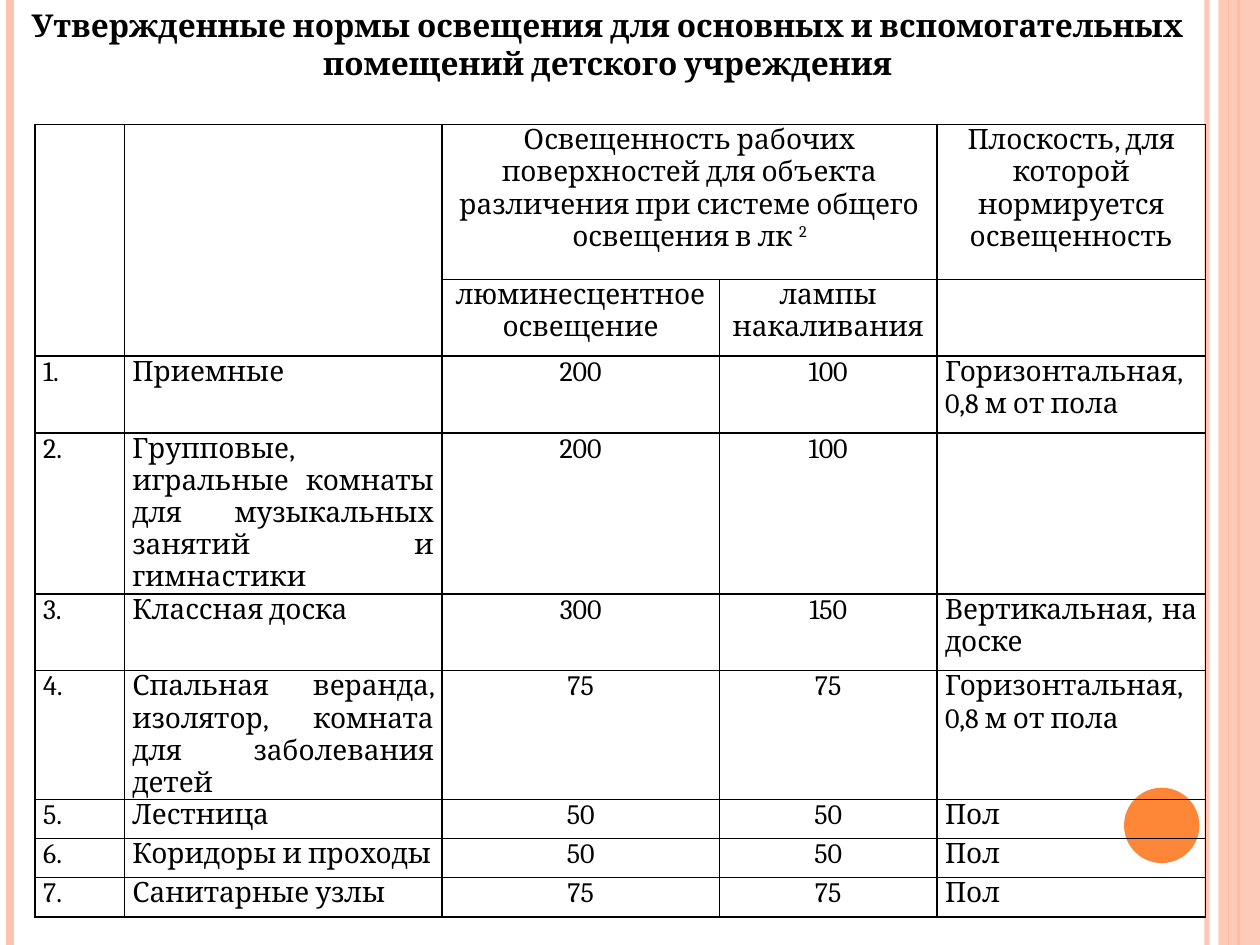
from typing import NamedTuple

from lxml.etree import SubElement
from pptx import Presentation
from pptx.dml.color import RGBColor
from pptx.enum.shapes import MSO_CONNECTOR, MSO_SHAPE
from pptx.enum.text import MSO_ANCHOR, MSO_AUTO_SIZE, PP_ALIGN
from pptx.oxml.ns import qn
from pptx.util import Cm, Pt

BLACK = RGBColor(0, 0, 0)
PEACH = RGBColor(0xFE, 0xC3, 0xAE)
ORANGE = RGBColor(0xFE, 0x86, 0x37)
FONT = "Cambria"
WIDE, HIGH = 25.4, 19.05

BODY = {"name": FONT, "size": Pt(16), "bold": False}
HEAD = {"name": FONT, "size": Pt(18), "bold": True}


class Stripe(NamedTuple):
    x: float
    color: RGBColor
    width: float
    alpha: int = 100


class Block(NamedTuple):
    kind: MSO_SHAPE
    box: tuple
    color: RGBColor
    alpha: int = 100


STRIPES = [
    Stripe(24.33, PEACH, 3, 93),
    Stripe(0.2, PEACH, 4.5),
    Stripe(24.97, ORANGE, 1.5),
    Stripe(24.77, ORANGE, 0.75),
]
BLOCKS = [
    Block(MSO_SHAPE.RECTANGLE, (24.56, 0, 0.84, HIGH), PEACH, 87),
    Block(MSO_SHAPE.OVAL, (22.66, 15.88, 1.52, 1.52), ORANGE),
]

TITLE = ("Утвержденные нормы освещения для основных и вспомогательных "
         "помещений детского учреждения")
COLS = [1.8, 6.4, 5.59, 4.39, 5.41]
ROWS = [3.12, 1.55, 1.55, 2.34, 1.55, 2.34, 0.79, 0.79, 0.79]
FLAT = "Горизонтальная, 0,8 м от пола"
TOP = [
    ["", "", "Освещенность рабочих поверхностей для объекта различения "
     "при системе общего освещения в лк ", "",
     "Плоскость, для которой нормируется освещенность"],
    ["", "", "люминесцентное освещение", "лампы накаливания", ""],
]
ROOMS = [
    ("Приемные", 200, 100, FLAT),
    ("Групповые, игральные комнаты для музыкальных занятий и гимнастики",
     200, 100, ""),
    ("Классная доска", 300, 150, "Вертикальная, на доске"),
    ("Спальная веранда, изолятор, комната для заболевания детей",
     75, 75, FLAT),
    ("Лестница", 50, 50, "Пол"),
    ("Коридоры и проходы", 50, 50, "Пол"),
    ("Санитарные узлы", 75, 75, "Пол"),
]


def style(item, values: dict) -> None:
    for key, value in values.items():
        setattr(item, key, value)


def fade(item, alpha: int) -> None:
    """Set the opacity, in percent, of the only colour in a shape."""
    if alpha < 100:
        color = next(item._element.spPr.iter(qn("a:srgbClr")))
        SubElement(color, qn("a:alpha")).set("val", str(alpha * 1000))


def add_stripe(slide, stripe: Stripe) -> None:
    x = Cm(stripe.x)
    line = slide.shapes.add_connector(
        MSO_CONNECTOR.STRAIGHT, x, 0, x, Cm(HIGH))
    line.line.color.rgb = stripe.color
    line.line.width = Pt(stripe.width)
    fade(line, stripe.alpha)
    SubElement(line._element.spPr, qn("a:effectLst"))


def add_block(slide, block: Block) -> None:
    shape = slide.shapes.add_shape(block.kind, *map(Cm, block.box))
    shape.shadow.inherit = False
    shape.fill.solid()
    shape.fill.fore_color.rgb = block.color
    shape.line.fill.background()
    fade(shape, block.alpha)


def add_run(para, text: str, font: dict):
    run = para.add_run()
    run.text = text
    style(run.font, font)
    run.font.color.rgb = BLACK
    return run


def frame(cell) -> None:
    """Give a cell black borders and no fill."""
    props = cell._tc.get_or_add_tcPr()
    for side in ("lnL", "lnR", "lnT", "lnB"):
        line = SubElement(props, qn(f"a:{side}"), w=str(Pt(1)))
        fill = SubElement(line, qn("a:solidFill"))
        SubElement(fill, qn("a:srgbClr"), val=str(BLACK))
    cell.fill.background()


def fill_cell(cell, text: str, align: PP_ALIGN) -> None:
    frame(cell)
    style(cell, {"margin_left": Cm(0.16), "margin_right": Cm(0.16),
                 "margin_top": 0, "margin_bottom": 0})
    if text:
        para = cell.text_frame.paragraphs[0]
        para.alignment = align
        add_run(para, text, BODY)


def add_norms(slide) -> None:
    rows = TOP + [[f"{n}.", *map(str, room)]
                  for n, room in enumerate(ROOMS, 1)]
    table = slide.shapes.add_table(
        len(ROWS), len(COLS), Cm(0.71), Cm(2.51),
        Cm(sum(COLS)), Cm(sum(ROWS))).table
    style(table, {"first_row": False, "horz_banding": False})
    for col, width in zip(table.columns, COLS):
        col.width = Cm(width)
    for row, height in zip(table.rows, ROWS):
        row.height = Cm(height)
    for r, row in enumerate(rows):
        for c, text in enumerate(row):
            mid = r < len(TOP) or c in (2, 3)
            align = PP_ALIGN.CENTER if mid else PP_ALIGN.JUSTIFY
            fill_cell(table.cell(r, c), text, align)
    power = add_run(table.cell(0, 2).text_frame.paragraphs[0], "2", BODY)
    power.font._element.set("baseline", "30000")
    for start, end in [((0, 0), (1, 0)), ((0, 1), (1, 1)), ((0, 2), (0, 3))]:
        table.cell(*start).merge(table.cell(*end))


def set_title(slide) -> None:
    title = slide.shapes.title
    style(title, {"left": 0, "top": 0, "width": Cm(24.51),
                  "height": Cm(2.82)})
    style(title.text_frame, {"word_wrap": True,
                             "auto_size": MSO_AUTO_SIZE.NONE,
                             "vertical_anchor": MSO_ANCHOR.TOP})
    para = title.text_frame.paragraphs[0]
    para.alignment = PP_ALIGN.CENTER
    add_run(para, TITLE, HEAD)


def main() -> None:
    deck = Presentation()
    style(deck, {"slide_width": Cm(WIDE), "slide_height": Cm(HIGH)})
    slide = deck.slides.add_slide(deck.slide_layouts[5])
    for stripe in STRIPES:
        add_stripe(slide, stripe)
    for block in BLOCKS:
        add_block(slide, block)
    add_norms(slide)
    set_title(slide)
    deck.save("out.pptx")


if __name__ == "__main__":
    main()
